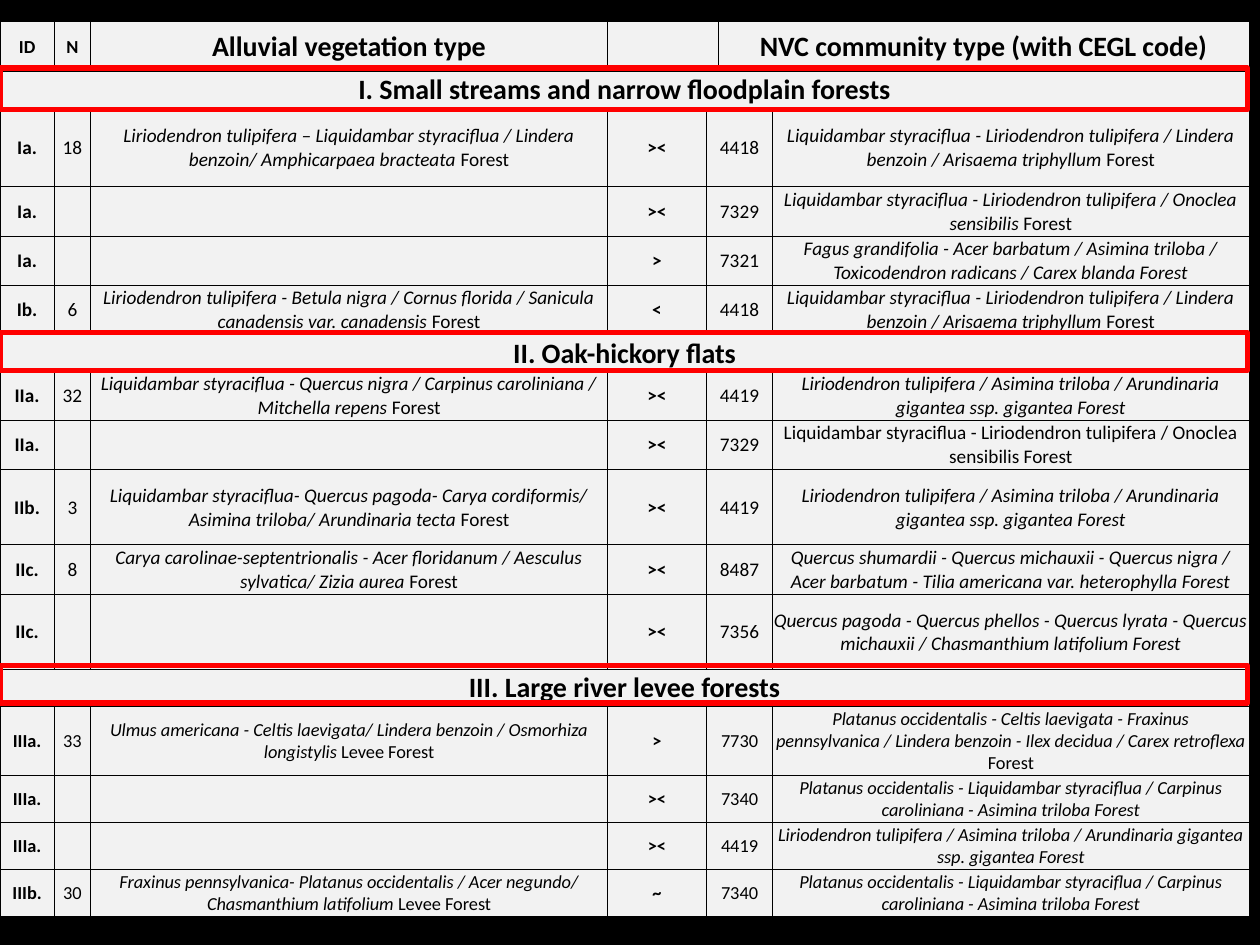
"""Build a slide with a table matching alluvial vegetation types to NVC communities."""
import pptx
import pptx.dml.color
import pptx.enum.shapes
import pptx.enum.text
import pptx.util
from lxml import etree

Pt = pptx.util.Pt
RGB = pptx.dml.color.RGBColor.from_string
ANCHOR = pptx.enum.text.MSO_ANCHOR
NS = "http://schemas.openxmlformats.org/drawingml/2006/main"
COLORS = {"back": "000000", "cell": "F2F2F2", "ink": "000000", "frame": "FF0000"}


def write(cell, text, size=11, bold=False, italic=False, anchor=ANCHOR.MIDDLE):
    cell.vertical_anchor = anchor
    p = cell.text_frame.paragraphs[0]
    p.alignment = pptx.enum.text.PP_ALIGN.CENTER
    r = p.add_run()
    r.text = text
    r.font.name = "Calibri"
    r.font.size = Pt(size)
    r.font.bold = bold
    r.font.italic = italic
    r.font.color.rgb = RGB(COLORS["ink"])


def border(cell, side, width):
    ln = etree.SubElement(cell._tc.get_or_add_tcPr(), f"{{{NS}}}ln{side}", w=str(Pt(width)))
    if width:
        fill = etree.SubElement(ln, f"{{{NS}}}solidFill")
        etree.SubElement(fill, f"{{{NS}}}srgbClr", val=COLORS["ink"])
    else:
        etree.SubElement(ln, f"{{{NS}}}noFill")


TULIP = "Liquidambar styraciflua - Liriodendron tulipifera / Lindera benzoin / Arisaema triphyllum| Forest"
CANE = "Liriodendron tulipifera / Asimina triloba / Arundinaria gigantea ssp. gigantea Forest"
PLANE = "Platanus occidentalis - Liquidambar styraciflua / Carpinus caroliniana - Asimina triloba Forest"

SECTIONS = [
    ("I. Small streams and narrow floodplain forests", 11, ANCHOR.BOTTOM, [
        (45.4, "Ia.", "18", "Liriodendron tulipifera – Liquidambar styraciflua / Lindera benzoin/ "
         "Amphicarpaea bracteata |Forest", "><", "4418", TULIP),
        (28.1, "Ia.", "", "", "><", "7329",
         "Liquidambar styraciflua - Liriodendron tulipifera / Onoclea sensibilis |Forest"),
        (28.1, "Ia.", "", "", ">", "7321", "Fagus grandifolia - Acer barbatum / Asimina triloba / "
         "Toxicodendron radicans / Carex blanda Forest"),
        (28.1, "Ib.", "6", "Liriodendron tulipifera - Betula nigra / Cornus florida / "
         "Sanicula canadensis var. canadensis| Forest", "<", "4418", TULIP),
    ]),
    ("II. Oak-hickory flats", 11, ANCHOR.BOTTOM, [
        (28.1, "IIa.", "32", "Liquidambar styraciflua - Quercus nigra / Carpinus caroliniana / "
         "Mitchella repens |Forest", "><", "4419", CANE),
        (28.1, "IIa.", "", "", "><", "7329",
         "|Liquidambar styraciflua - Liriodendron tulipifera / Onoclea sensibilis Forest"),
        (43.2, "IIb.", "3", "Liquidambar styraciflua- Quercus pagoda- Carya cordiformis/ "
         "Asimina triloba/ Arundinaria tecta |Forest", "><", "4419", CANE),
        (28.1, "IIc.", "8", "Carya carolinae-septentrionalis - Acer floridanum / "
         "Aesculus sylvatica/ Zizia aurea |Forest", "><", "8487",
         "Quercus shumardii - Quercus michauxii - Quercus nigra / Acer barbatum - "
         "Tilia americana var. heterophylla Forest"),
        (43.2, "IIc.", "", "", "><", "7356", "Quercus pagoda - Quercus phellos - Quercus lyrata - "
         "Quercus michauxii / Chasmanthium latifolium Forest"),
    ]),
    ("III. Large river levee forests", 10.5, ANCHOR.MIDDLE, [
        (39.6, "IIIa.", "33", "Ulmus americana - Celtis laevigata/ Lindera benzoin / "
         "Osmorhiza longistylis |Levee Forest", ">", "7730",
         "Platanus occidentalis - Celtis laevigata - Fraxinus pennsylvanica / Lindera benzoin - "
         "Ilex decidua / Carex retroflexa |Forest"),
        (26.8, "IIIa.", "", "", "><", "7340", PLANE),
        (26.8, "IIIa.", "", "", "><", "4419", CANE),
        (26.8, "IIIb.", "30", "Fraxinus pennsylvanica- Platanus occidentalis / Acer negundo/ "
         "Chasmanthium latifolium |Levee Forest", "~", "7340", PLANE),
    ]),
]
HEADER = [(0, "ID", 10.5), (1, "N", 10.5), (2, "Alluvial vegetation type", 16),
          (5, "NVC community type (with CEGL code)", 16)]
WIDTHS = [31, 20.9, 295.2, 56.7, 6.5, 31.2, 272.4]
FRAMES = [(38.9, 23.8), (190.1, 21.6), (380.2, 21.6)]

prs = pptx.Presentation()
prs.slide_width, prs.slide_height = Pt(720), Pt(540)
s = prs.slides.add_slide(prs.slide_layouts[6])
s.background.fill.solid()
s.background.fill.fore_color.rgb = RGB(COLORS["back"])

n_rows = 1 + sum(1 + len(rows) for _, _, _, rows in SECTIONS)
tbl = s.shapes.add_table(n_rows, len(WIDTHS), 0, Pt(12.4), Pt(sum(WIDTHS)), Pt(510)).table
tbl.first_row = tbl.horz_banding = False
for col, width in zip(tbl.columns, WIDTHS):
    col.width = Pt(width)

for i in range(n_rows):
    for j in range(len(WIDTHS)):
        cell = tbl.cell(i, j)
        cell.margin_left = cell.margin_right = cell.margin_top = Pt(0.6)
        cell.margin_bottom = 0
        border(cell, "L", 0.5)
        border(cell, "R", 0.5)
        border(cell, "T", 2 if i == 1 else 0.5)
        border(cell, "B", 2 if i == 0 else 0 if i == n_rows - 1 else 0.5)
        cell.fill.solid()
        cell.fill.fore_color.rgb = RGB(COLORS["cell"])

tbl.rows[0].height = Pt(28.1)
tbl.cell(0, 3).merge(tbl.cell(0, 4))
tbl.cell(0, 5).merge(tbl.cell(0, 6))
for j, text, size in HEADER:
    write(tbl.cell(0, j), text, size=size, bold=True)

i = 1
for title, size, anchor, rows in SECTIONS:
    tbl.rows[i].height = Pt(20.9)
    tbl.cell(i, 0).merge(tbl.cell(i, 6))
    write(tbl.cell(i, 0), title, size=16, bold=True, anchor=anchor)
    i += 1
    for height, *texts in rows:
        tbl.rows[i].height = Pt(height)
        tbl.cell(i, 4).merge(tbl.cell(i, 5))
        for j, text in zip((0, 1, 2, 3, 4, 6), texts):
            if j in (2, 6):
                latin, _, plain = text.partition("|")
                for part, italic in ((latin, True), (plain, False)):
                    if part:
                        write(tbl.cell(i, j), part, size=size, italic=italic)
            elif text:
                write(tbl.cell(i, j), text, size=size, bold=j in (0, 3))
        i += 1

for top, height in FRAMES:
    sp = s.shapes.add_shape(pptx.enum.shapes.MSO_SHAPE.RECTANGLE, 0, Pt(top), Pt(712.8), Pt(height))
    sp.shadow.inherit = False
    sp.fill.background()
    sp.line.color.rgb = RGB(COLORS["frame"])
    sp.line.width = Pt(3)

prs.save("out.pptx")
